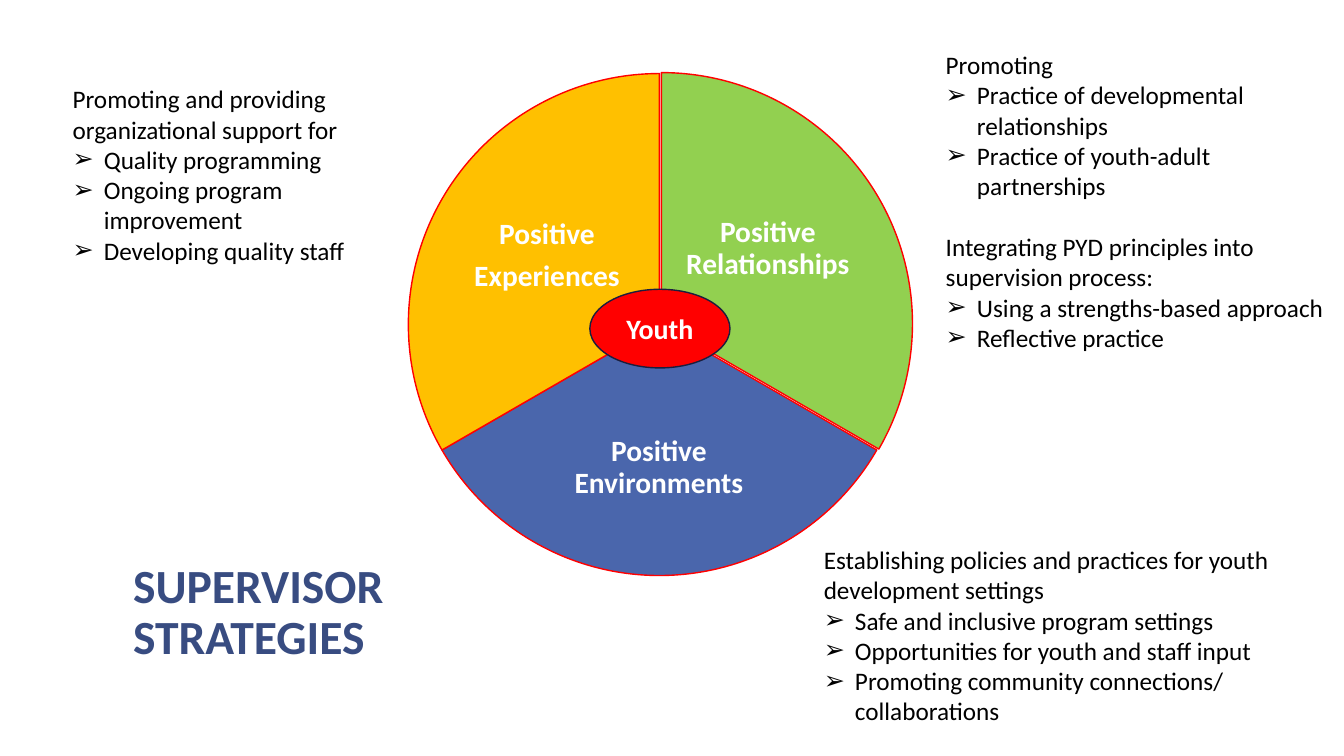
from dataclasses import dataclass
from typing import Any

from lxml.etree import SubElement
from pptx import Presentation
from pptx.dml.color import RGBColor
from pptx.enum.shapes import MSO_SHAPE
from pptx.enum.text import MSO_ANCHOR, MSO_AUTO_SIZE, PP_ALIGN
from pptx.oxml.ns import qn
from pptx.util import Inches, Pt

Box = tuple[float, float, float, float]


@dataclass(frozen=True)
class Theme:
    font: str = "Calibri"
    ink: str = "000000"
    white: str = "FFFFFF"
    navy: str = "384C81"
    edge: str = "1B1E3E"
    red: str = "FF0000"
    green: str = "92D050"
    blue: str = "4A66AC"
    gold: str = "FFC000"
    body: int = 18
    core: int = 20
    label: int = 21
    title: int = 34
    indent: float = 0.31
    inset: float = 0.03


@dataclass(frozen=True)
class Group:
    lead: str
    points: list[str]


@dataclass(frozen=True)
class Panel:
    slot: int
    box: Box
    groups: list[Group]


@dataclass(frozen=True)
class Wedge:
    text: str
    fill: str
    start: int
    end: int
    left: float
    top: float
    box: Box


THEME = Theme()
SIZE = 4.98

PANELS = [
    Panel(1, (9.28, 0.44, 4.04, 3.74), [
        Group("Promoting", [
            "Practice of developmental relationships",
            "Practice of youth-adult partnerships",
        ]),
        Group("Integrating PYD principles into supervision process:", [
            "Using a strengths-based approach",
            "Reflective practice",
        ]),
    ]),
    Panel(2, (8.07, 5.35, 5.06, 1.92), [
        Group("Establishing policies and practices for youth development settings", [
            "Safe and inclusive program settings",
            "Opportunities for youth and staff input",
            "Promoting community connections/ collaborations",
        ]),
    ]),
    Panel(4, (0.62, 0.78, 3.62, 1.92), [
        Group("Promoting and providing organizational support for", [
            "Quality programming",
            "Ongoing program improvement",
            "Developing quality staff",
        ]),
    ]),
]

WEDGES = [
    Wedge("Positive Relationships", THEME.green, 270, 30, 4.07, 0.72, (6.77, 1.64, 1.69, 1.66)),
    Wedge("Positive Environments", THEME.blue, 30, 150, 4.05, 0.73, (5.41, 3.87, 2.25, 1.54)),
    Wedge("Positive\nExperiences", THEME.gold, 150, 270, 4.05, 0.73, (4.58, 1.71, 1.69, 1.66)),
]


def apply(item: Any, values: dict[str, Any]) -> None:
    for name, value in values.items():
        setattr(item, name, value)


def place(shape: Any, box: Box) -> None:
    apply(shape, dict(zip(("left", "top", "width", "height"), map(Inches, box))))


def style(para: Any, size: int, color: str, bold: bool, **form: Any) -> None:
    apply(para, form)
    for run in para.runs:
        apply(run.font, {"name": THEME.font, "size": Pt(size), "bold": bold})
        run.font.color.rgb = RGBColor.from_string(color)


def mark(para: Any, on: bool) -> None:
    props = para._p.get_or_add_pPr()
    step = Inches(THEME.indent) if on else 0
    props.set("marL", str(step))
    props.set("indent", str(-step))
    if on:
        SubElement(props, qn("a:buChar")).set("char", "➢")
    else:
        SubElement(props, qn("a:buNone"))


def paint(shape: Any, fill: str, line: str) -> None:
    shape.shadow.inherit = False
    shape.fill.solid()
    shape.fill.fore_color.rgb = RGBColor.from_string(fill)
    shape.line.color.rgb = RGBColor.from_string(line)
    shape.line.width = Pt(1)


def draw_title(shape: Any) -> None:
    place(shape, (1.22, 5.53, 3.84, 1.9))
    frame = shape.text_frame
    frame.text = "SUPERVISOR\nSTRATEGIES"
    apply(frame, {"vertical_anchor": MSO_ANCHOR.TOP, "auto_size": MSO_AUTO_SIZE.NONE})
    for para in frame.paragraphs:
        style(para, THEME.title, THEME.navy, True, alignment=PP_ALIGN.LEFT, line_spacing=0.9)


def draw_panel(shape: Any, panel: Panel) -> None:
    place(shape, panel.box)
    frame = shape.text_frame
    apply(frame, {
        "vertical_anchor": MSO_ANCHOR.TOP,
        "auto_size": MSO_AUTO_SIZE.SHAPE_TO_FIT_TEXT,
        "word_wrap": True,
    })
    rows = [
        (text, rank > 0, Pt(22) if rank == 0 and order > 0 else Pt(0))
        for order, group in enumerate(panel.groups)
        for rank, text in enumerate([group.lead, *group.points])
    ]
    frame.text = "\n".join(text for text, _, _ in rows)
    for para, (_, point, gap) in zip(frame.paragraphs, rows):
        style(para, THEME.body, THEME.ink, False, space_before=gap)
        mark(para, point)


def draw_wedge(shapes: Any, wedge: Wedge) -> None:
    pie = shapes.add_shape(
        MSO_SHAPE.PIE, *map(Inches, (wedge.left, wedge.top, SIZE, SIZE)))
    pie.adjustments[0] = wedge.start * 0.6
    pie.adjustments[1] = wedge.end * 0.6
    paint(pie, wedge.fill, THEME.red)
    frame = shapes.add_textbox(*map(Inches, wedge.box)).text_frame
    sides = ("margin_left", "margin_top", "margin_right", "margin_bottom")
    apply(frame, dict.fromkeys(sides, Inches(THEME.inset)))
    apply(frame, {"word_wrap": True, "vertical_anchor": MSO_ANCHOR.MIDDLE})
    frame.text = wedge.text
    for para in frame.paragraphs:
        style(para, THEME.label, THEME.white, True,
              alignment=PP_ALIGN.CENTER, line_spacing=0.9, space_after=Pt(7))


def draw_core(shapes: Any) -> None:
    core = shapes.add_shape(MSO_SHAPE.OVAL, *map(Inches, (5.85, 2.87, 1.39, 0.78)))
    paint(core, THEME.red, THEME.edge)
    frame = core.text_frame
    frame.text = "Youth"
    frame.vertical_anchor = MSO_ANCHOR.MIDDLE
    style(frame.paragraphs[0], THEME.core, THEME.white, True, alignment=PP_ALIGN.CENTER)


def main() -> None:
    deck = Presentation()
    apply(deck, {"slide_width": Inches(13.33), "slide_height": Inches(7.5)})
    slide = deck.slides.add_slide(deck.slide_layouts.get_by_name("Comparison"))
    slots = {item.placeholder_format.idx: item for item in slide.placeholders}
    draw_title(slots.pop(0))
    for panel in PANELS:
        draw_panel(slots.pop(panel.slot), panel)
    for spare in slots.values():
        spare.element.getparent().remove(spare.element)
    for wedge in WEDGES:
        draw_wedge(slide.shapes, wedge)
    draw_core(slide.shapes)
    deck.save("out.pptx")


if __name__ == "__main__":
    main()
